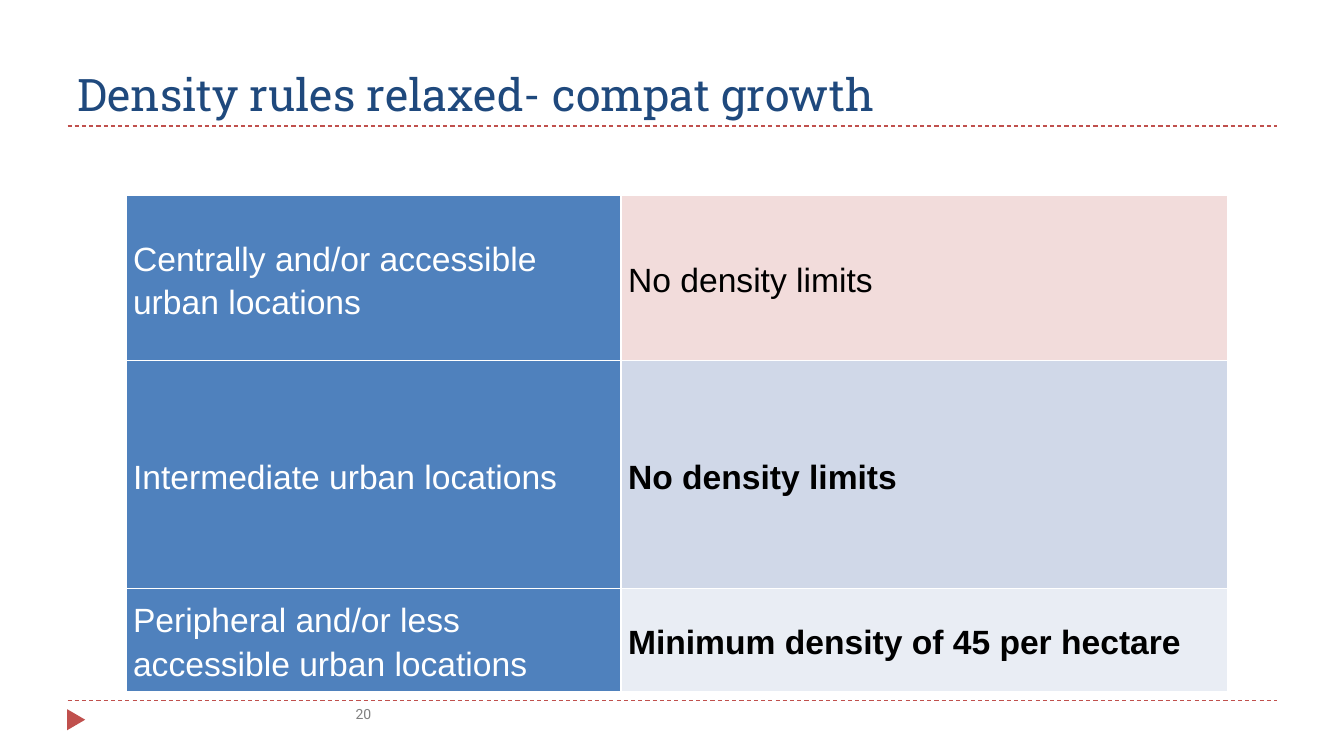
from dataclasses import dataclass

import pptx
import pptx.dml.color
import pptx.enum.dml
import pptx.enum.shapes
import pptx.enum.text
import pptx.oxml
import pptx.oxml.ns
import pptx.util

Inches = pptx.util.Inches
Color = pptx.dml.color.RGBColor.from_string
Anchor = pptx.enum.text.MSO_ANCHOR
Align = pptx.enum.text.PP_ALIGN


@dataclass(frozen=True)
class Theme:
    navy: str = "1F497D"
    blue: str = "4F81BD"
    red: str = "C0504D"
    gray: str = "808080"
    white: str = "FFFFFF"
    black: str = "000000"
    head_font: str = "Roboto Slab"
    note_font: str = "Roboto"
    cell_font: str = "Arial"
    head_size: int = 32
    cell_size: int = 24
    note_size: int = 10


@dataclass(frozen=True)
class Zone:
    place: str
    rule: str
    fill: str
    bold: bool
    height: float


THEME = Theme()
WIDTHS = (4.91, 6.02)
RULES = (6.95, 1.25)
ZONES = (
    Zone("Centrally and/or accessible urban locations",
         "No density limits", "F2DCDB", False, 1.64),
    Zone("Intermediate urban locations",
         "No density limits", "D0D8E8", True, 2.26),
    Zone("Peripheral and/or less accessible urban locations",
         "Minimum density of 45 per hectare", "E9EDF4", True, 1.02),
)


def style(para, font: str, size: int, color: str, bold: bool = False) -> None:
    para.font.name = font
    para.font.size = pptx.util.Pt(size)
    para.font.color.rgb = Color(color)
    para.font.bold = bold


def draw_rule(slide, top: float) -> None:
    line = slide.shapes.add_connector(
        pptx.enum.shapes.MSO_CONNECTOR.STRAIGHT,
        Inches(0.67), Inches(top), Inches(12.67), Inches(top))
    line.line.color.rgb = Color(THEME.red)
    line.line.width = pptx.util.Pt(0.75)
    line.line.dash_style = pptx.enum.dml.MSO_LINE.DASH
    props = line._element.spPr
    props.append(pptx.oxml.parse_xml(
        f"<a:effectLst {pptx.oxml.ns.nsdecls('a')}/>"))


def draw_mark(slide) -> None:
    mark = slide.shapes.add_shape(
        pptx.enum.shapes.MSO_SHAPE.ISOSCELES_TRIANGLE,
        Inches(0.65), Inches(7.05), Inches(0.21), Inches(0.18))
    mark.rotation = 90
    mark.shadow.inherit = False
    mark.fill.solid()
    mark.fill.fore_color.rgb = Color(THEME.red)
    mark.line.fill.background()


def draw_title(slide, text: str) -> None:
    title = slide.shapes.title
    title.left, title.top = Inches(0.67), Inches(0.25)
    title.width, title.height = Inches(12), Inches(1)
    frame = title.text_frame
    frame.text = text
    frame.auto_size = pptx.enum.text.MSO_AUTO_SIZE.NONE
    frame.vertical_anchor = Anchor.BOTTOM
    para = frame.paragraphs[0]
    para.alignment = Align.LEFT
    style(para, THEME.head_font, THEME.head_size, THEME.navy)


def draw_number(slide, text: str) -> None:
    box = slide.shapes.add_textbox(
        Inches(0.89), Inches(6.95), Inches(2.89), Inches(0.4))
    box.text_frame.word_wrap = True
    para = box.text_frame.paragraphs[0]
    para.text = text
    para.alignment = Align.RIGHT
    style(para, THEME.note_font, THEME.note_size, THEME.gray)


def fill_cell(cell, text: str, fill: str, color: str, bold: bool) -> None:
    cell.text = text
    cell.vertical_anchor = Anchor.MIDDLE
    cell.margin_left = cell.margin_right = Inches(0.07)
    cell.margin_top = cell.margin_bottom = 0
    para = cell.text_frame.paragraphs[0]
    para.line_spacing = 1.15
    style(para, THEME.cell_font, THEME.cell_size, color, bold)
    cell.fill.solid()
    cell.fill.fore_color.rgb = Color(fill)
    # Borders come before the fill in the cell properties
    props = cell._tc.get_or_add_tcPr()
    for spot, side in enumerate(("lnL", "lnR", "lnT", "lnB")):
        props.insert(spot, pptx.oxml.parse_xml(
            f"<a:{side} {pptx.oxml.ns.nsdecls('a')} w='{pptx.util.Pt(1)}'>"
            f"<a:solidFill><a:srgbClr val='{THEME.white}'/></a:solidFill>"
            f"</a:{side}>"))


def draw_table(slide, zones: tuple[Zone, ...]) -> None:
    frame = slide.shapes.add_table(
        len(zones), len(WIDTHS), Inches(1.25), Inches(1.94),
        Inches(sum(WIDTHS)), Inches(sum(zone.height for zone in zones)))
    table = frame.table
    table.first_row = table.horz_banding = False
    for column, width in zip(table.columns, WIDTHS):
        column.width = Inches(width)
    for row, zone in zip(table.rows, zones):
        row.height = Inches(zone.height)
        place, rule = row.cells
        fill_cell(place, zone.place, THEME.blue, THEME.white, False)
        fill_cell(rule, zone.rule, zone.fill, THEME.black, zone.bold)


def main() -> None:
    deck = pptx.Presentation()
    deck.slide_width, deck.slide_height = Inches(13.33), Inches(7.5)
    slide = deck.slides.add_slide(deck.slide_layouts[5])

    # Frame of the page
    for top in RULES:
        draw_rule(slide, top)
    draw_mark(slide)

    # Content
    draw_title(slide, "Density rules relaxed- compat growth")
    draw_number(slide, "20")
    draw_table(slide, ZONES)

    deck.save("out.pptx")


if __name__ == "__main__":
    main()
